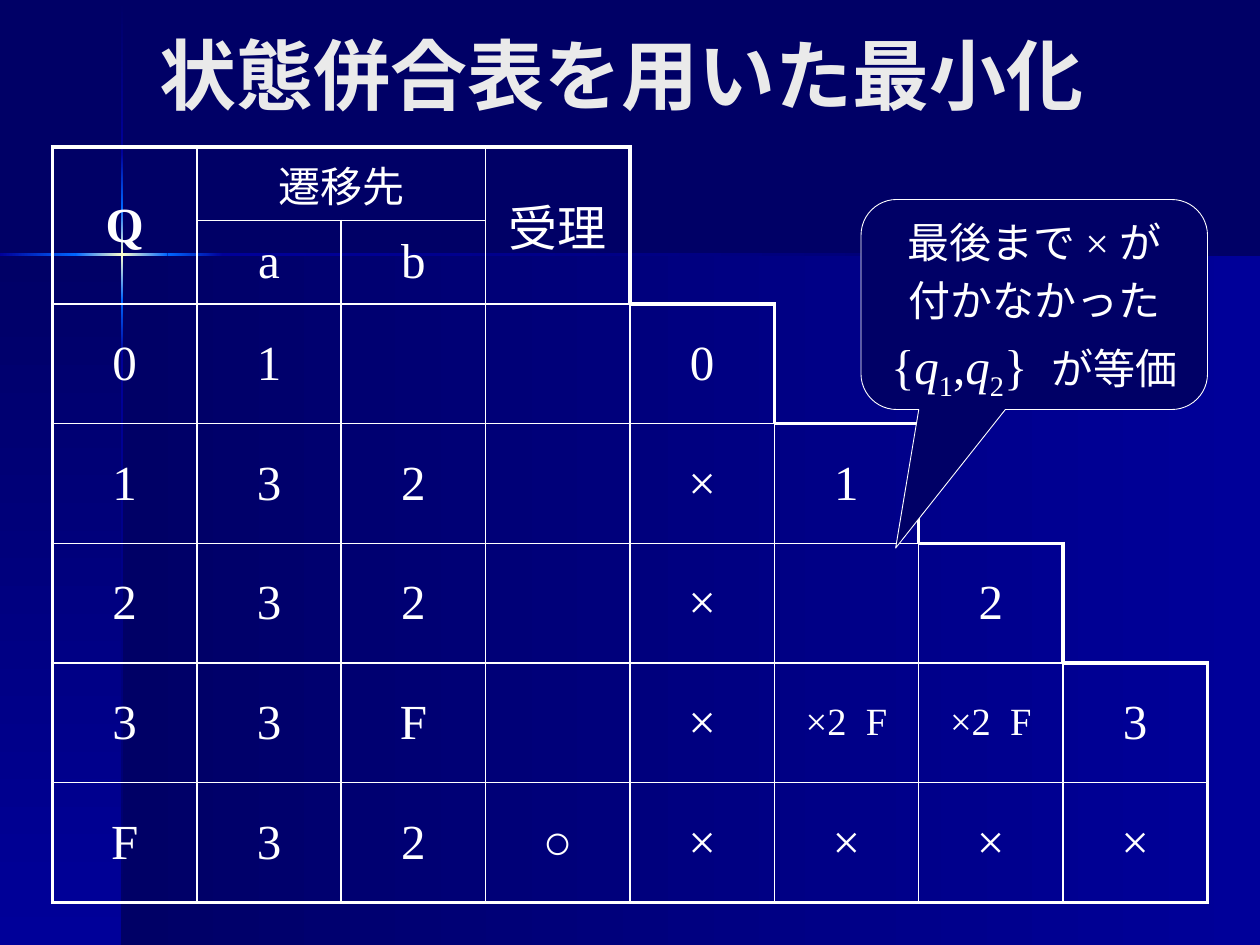
from itertools import pairwise

from lxml.etree import SubElement
from pptx import Presentation
from pptx.dml.color import RGBColor
from pptx.enum.lang import MSO_LANGUAGE_ID
from pptx.enum.shapes import MSO_SHAPE
from pptx.enum.text import MSO_ANCHOR, MSO_AUTO_SIZE, PP_ALIGN
from pptx.oxml.ns import qn
from pptx.util import Inches, Pt

NAVY = RGBColor(0x00, 0x00, 0x66)
BLUE = RGBColor(0x00, 0x00, 0x99)
GLOW = RGBColor(0x00, 0x66, 0xFF)
CREAM = RGBColor(0xFF, 0xFF, 0xCC)
WHITE = RGBColor(0xFF, 0xFF, 0xFF)
PALE = RGBColor(0xEA, 0xEA, 0xEA)
THIN, THICK = Pt(1), Pt(2.25)

prs = Presentation()
prs.slide_width, prs.slide_height = Inches(10), Inches(7.5)
UNIT = prs.slide_width / 24  # the slide is a grid of 24 by 18 units
slide = prs.slides.add_slide(prs.slide_layouts[5])
slide.background.fill.solid()
slide.background.fill.fore_color.rgb = NAVY


def style_paragraph(paragraph, size, color=WHITE, align=PP_ALIGN.CENTER, bold=False):
    paragraph.alignment = align
    spacing = SubElement(paragraph._p.get_or_add_pPr(), qn("a:spcBef"))
    SubElement(spacing, qn("a:spcPct"), val="20000")
    for run in paragraph.runs:
        run.font.name = "Times New Roman"
        run.font.size = Pt(size)
        run.font.bold = bold
        run.font.color.rgb = color
        run.font.language_id = MSO_LANGUAGE_ID.JAPANESE


def add_gradient(left, top, right, bottom, start, end, downward):
    panel = slide.shapes.add_shape(
        MSO_SHAPE.RECTANGLE, Inches(left), Inches(top),
        Inches(right - left), Inches(bottom - top))
    panel.shadow.inherit = False
    panel.line.fill.background()
    panel.fill.gradient()
    panel.fill.gradient_angle = 270 if downward else 0
    for stop, color, position in zip(panel.fill.gradient_stops, (start, end), (0, 1)):
        stop.color.rgb = color
        stop.position = position


# Background: two panels and two beams that cross at their corner
CROSS_X, CROSS_Y, HALF_BEAM = 0.97, 2.02, 0.01
add_gradient(CROSS_X, CROSS_Y, 10, 7.5, NAVY, BLUE, False)
add_gradient(0, CROSS_Y, CROSS_X, 7.5, NAVY, BLUE, True)

vertical_beam = [(0, NAVY), (1.21, BLUE), (1.65, GLOW), (CROSS_Y, CREAM),
                 (2.38, GLOW), (2.82, BLUE), (7.5, NAVY)]
for (top, start), (bottom, end) in pairwise(vertical_beam):
    add_gradient(CROSS_X - HALF_BEAM, top, CROSS_X + HALF_BEAM, bottom, start, end, True)

horizontal_beam = [(0, BLUE), (0.6, GLOW), (CROSS_X, CREAM),
                   (1.33, GLOW), (1.77, BLUE), (10, NAVY)]
for (left, start), (right, end) in pairwise(horizontal_beam):
    add_gradient(left, CROSS_Y - HALF_BEAM, right, CROSS_Y + HALF_BEAM, start, end, False)

# Title
title = slide.shapes.title
title.left, title.top = int(2.8 * UNIT), int(0.6 * UNIT)
title.width, title.height = int(20 * UNIT), int(1.6 * UNIT)
title.text_frame.text = "状態併合表を用いた最小化"
title.text_frame.auto_size = MSO_AUTO_SIZE.NONE
title.text_frame.vertical_anchor = MSO_ANCHOR.MIDDLE
style_paragraph(title.text_frame.paragraphs[0], 44, PALE, PP_ALIGN.LEFT, True)

# State merging table
state_rows = [
    ["Q", "遷移先", "", "受理"],
    ["", "a", "b", ""],
    ["0", "1", "", "", "0"],
    ["1", "3", "2", "", "×", "1"],
    ["2", "3", "2", "", "×", "", "2"],
    ["3", "3", "F", "", "×", "×2  F", "×2  F", "3"],
    ["F", "3", "2", "○", "×", "×", "×", "×"],
]
special_sizes = {"遷移先": 24, "×2  F": 22}
row_heights = [1.4] * 2 + [2.28] * 5
merged_into = {(1, 0): (0, 0), (0, 2): (0, 1), (1, 3): (0, 3)}

# Each cell inside the staircase belongs to itself or to its merged cell
owners = {(r, c): merged_into.get((r, c), (r, c))
          for r, texts in enumerate(state_rows) for c in range(len(texts))}

table = slide.shapes.add_table(
    7, 8, int(UNIT), int(2.8 * UNIT), int(22 * UNIT), int(sum(row_heights) * UNIT)).table
table.first_row = table.horz_banding = False
for column in table.columns:
    column.width = int(22 / 8 * UNIT)
for row, height in zip(table.rows, row_heights):
    row.height = int(height * UNIT)
for last, first in merged_into.items():
    table.cell(*first).merge(table.cell(*last))

for r in range(7):
    for c in range(8):
        cell = table.cell(r, c)
        owner = owners.get((r, c))
        next_row, next_column = r + cell.span_height, c + cell.span_width
        neighbours = {"L": (r, c - 1), "R": (r, next_column),
                      "T": (r - 1, c), "B": (next_row, c)}
        for side, place in neighbours.items():
            neighbour = owners.get(place)
            border = SubElement(cell._tc.get_or_add_tcPr(), qn(f"a:ln{side}"))
            if owner == neighbour:
                SubElement(border, qn("a:noFill"))
                continue
            border.set("w", str(THIN if owner and neighbour else THICK))
            line_fill = SubElement(border, qn("a:solidFill"))
            SubElement(line_fill, qn("a:srgbClr"), val=str(WHITE))
        cell.fill.background()
        cell.vertical_anchor = MSO_ANCHOR.MIDDLE
        if owner and state_rows[r][c]:
            text = state_rows[r][c]
            cell.text_frame.text = text
            style_paragraph(cell.text_frame.paragraphs[0],
                            special_sizes.get(text, 28), bold=text == "Q")

# Callout on the pair that is never crossed out
callout = slide.shapes.add_shape(
    MSO_SHAPE.ROUNDED_RECTANGULAR_CALLOUT,
    int(16.4 * UNIT), int(3.8 * UNIT), int(6.6 * UNIT), int(4 * UNIT))
for index, value in enumerate((-0.4, 1.16, 0.17)):
    callout.adjustments[index] = value
callout.shadow.inherit = False
callout.fill.solid()
callout.fill.fore_color.rgb = NAVY
callout.line.color.rgb = WHITE
callout.line.width = Pt(0.5)
message = callout.text_frame
message.vertical_anchor = MSO_ANCHOR.TOP
message.text = "最後まで×が\n付かなかった"
for paragraph in message.paragraphs:
    style_paragraph(paragraph, 24)

pair = message.add_paragraph()
for part in ("{", "q", "1", ",", "q", "2", "} ", "が等価"):
    pair.add_run().text = part
style_paragraph(pair, 28)
for run in pair.runs:
    if run.text == "q":
        run.font.italic = True
    elif run.text.isdigit():
        run.font._element.set("baseline", "-25000")
pair.runs[-1].font.size = Pt(24)

prs.save("out.pptx")
